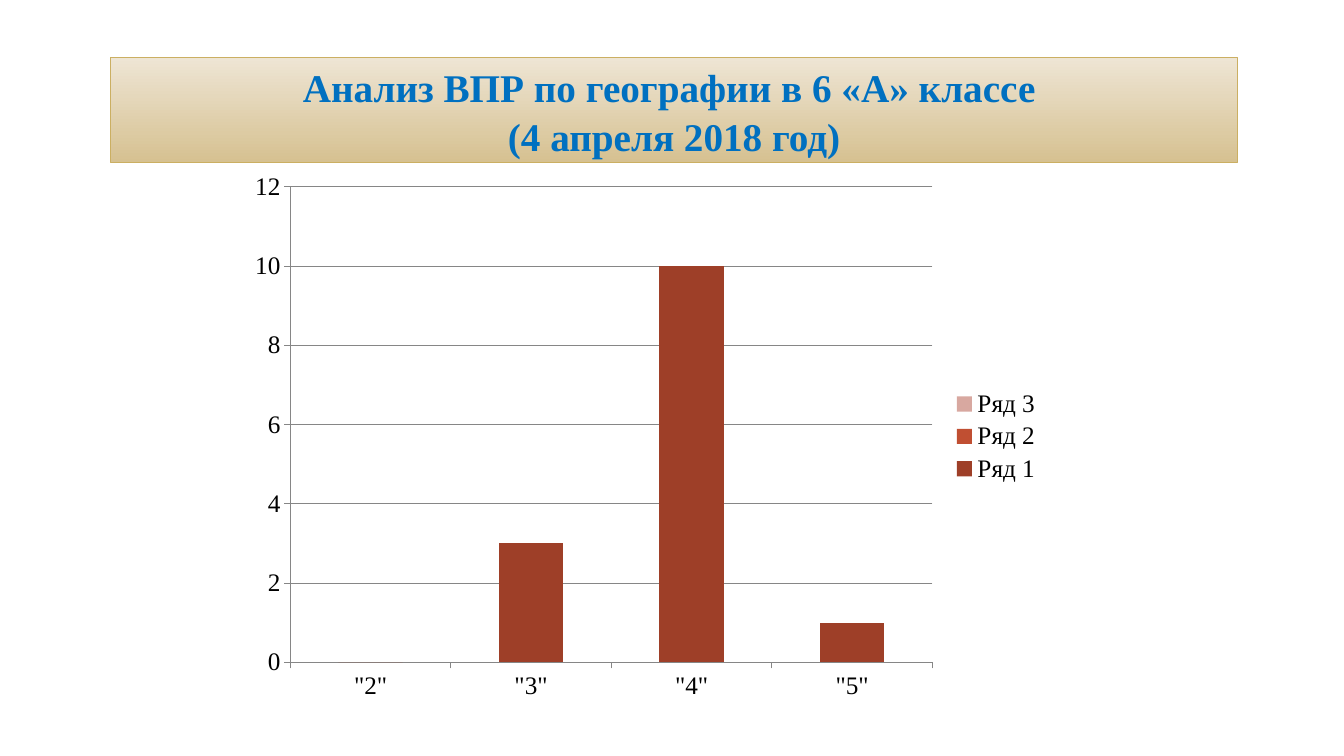
from pptx import Presentation
from pptx.chart.data import CategoryChartData
from pptx.dml.color import RGBColor
from pptx.enum.chart import XL_CHART_TYPE, XL_LEGEND_POSITION, XL_TICK_MARK
from pptx.enum.text import MSO_ANCHOR, MSO_AUTO_SIZE, PP_ALIGN
from pptx.util import Emu, Pt

PX = 9144  # 100 px to the inch
FONT = "Times New Roman"
TITLE_BLUE = RGBColor(0x00, 0x70, 0xC0)
BANNER_TOP = RGBColor(0xEE, 0xE5, 0xD4)
BANNER_BOTTOM = RGBColor(0xD6, 0xC1, 0x91)
BANNER_LINE = RGBColor(0xCB, 0xAF, 0x62)
AXIS_GREY = RGBColor(0x86, 0x86, 0x86)
BLACK = RGBColor(0x00, 0x00, 0x00)
BRICK = RGBColor(0x9E, 0x3F, 0x28)
RUST = RGBColor(0xC0, 0x4F, 0x32)
PINK = RGBColor(0xD8, 0xA8, 0xA0)

TITLE_LINES = ["Анализ ВПР по географии в 6 «А» классе ", "(4 апреля 2018 год)"]
GRADES = ['"2"', '"3"', '"4"', '"5"']
SERIES = [
    ("Ряд 1", [0, 3, 10, 1], BRICK),
    ("Ряд 2", [None] * 4, RUST),
    ("Ряд 3", [None] * 4, PINK),
]


def px(value):
    return Emu(value * PX)


def set_attributes(target, values):
    for name, value in values.items():
        setattr(target, name, value)


def style_font(font, size, color, bold=False):
    set_attributes(font, {"name": FONT, "size": Pt(size), "bold": bold})
    font.color.rgb = color


def style_line(line, color):
    line.color.rgb = color
    line.width = Pt(0.75)


def place_title(title, left, top, width, height):
    set_attributes(title, {"left": px(left), "top": px(top),
                           "width": px(width), "height": px(height)})
    title.fill.gradient()
    title.fill.gradient_angle = 270
    for stop, position, color in zip(title.fill.gradient_stops, (0, 1),
                                     (BANNER_TOP, BANNER_BOTTOM)):
        stop.position = position
        stop.color.rgb = color
    style_line(title.line, BANNER_LINE)

    frame = title.text_frame
    frame.text = "\n".join(TITLE_LINES)
    set_attributes(frame, {"word_wrap": True, "auto_size": MSO_AUTO_SIZE.NONE,
                           "vertical_anchor": MSO_ANCHOR.MIDDLE})
    for paragraph in frame.paragraphs:
        set_attributes(paragraph, {"alignment": PP_ALIGN.CENTER, "line_spacing": 1.05,
                                   "space_before": Pt(0)})
        for run in paragraph.runs:
            style_font(run.font, 28, TITLE_BLUE, bold=True)


def add_grades_chart(slide, left, top, width, height):
    data = CategoryChartData()
    data.categories = GRADES
    for name, values, _ in SERIES:
        data.add_series(name, values)
    chart = slide.shapes.add_chart(XL_CHART_TYPE.COLUMN_STACKED, px(left), px(top),
                                   px(width), px(height), data).chart
    style_font(chart.font, 18, BLACK)
    set_attributes(chart, {"has_title": False, "has_legend": True})
    set_attributes(chart.legend, {"position": XL_LEGEND_POSITION.RIGHT,
                                  "include_in_layout": False})

    plot = chart.plots[0]
    set_attributes(plot, {"gap_width": 150, "overlap": 100, "vary_by_categories": False})
    for series, (_, _, color) in zip(plot.series, SERIES):
        series.format.fill.solid()
        series.format.fill.fore_color.rgb = color

    for axis in (chart.category_axis, chart.value_axis):
        set_attributes(axis, {"major_tick_mark": XL_TICK_MARK.OUTSIDE,
                              "minor_tick_mark": XL_TICK_MARK.NONE})
        style_line(axis.format.line, AXIS_GREY)
    set_attributes(chart.value_axis, {"minimum_scale": 0, "maximum_scale": 12,
                                      "major_unit": 2, "has_major_gridlines": True})
    style_line(chart.value_axis.major_gridlines.format.line, AXIS_GREY)


def main():
    presentation = Presentation()
    set_attributes(presentation, {"slide_width": px(1333), "slide_height": px(750)})
    slide = presentation.slides.add_slide(presentation.slide_layouts[5])
    place_title(slide.shapes.title, 110, 57, 1117, 104)
    add_grades_chart(slide, 237, 161, 806, 544)
    presentation.save("out.pptx")


if __name__ == "__main__":
    main()
